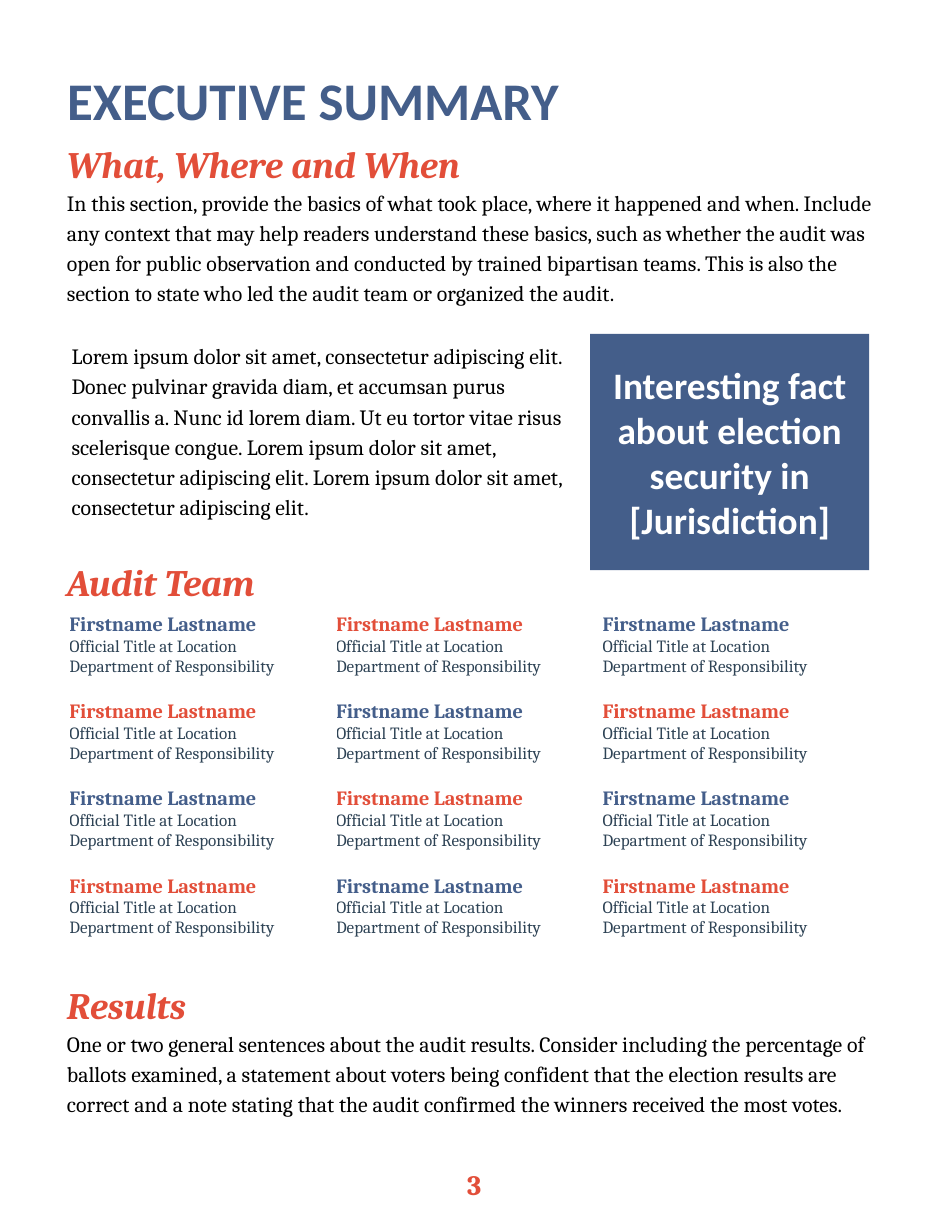
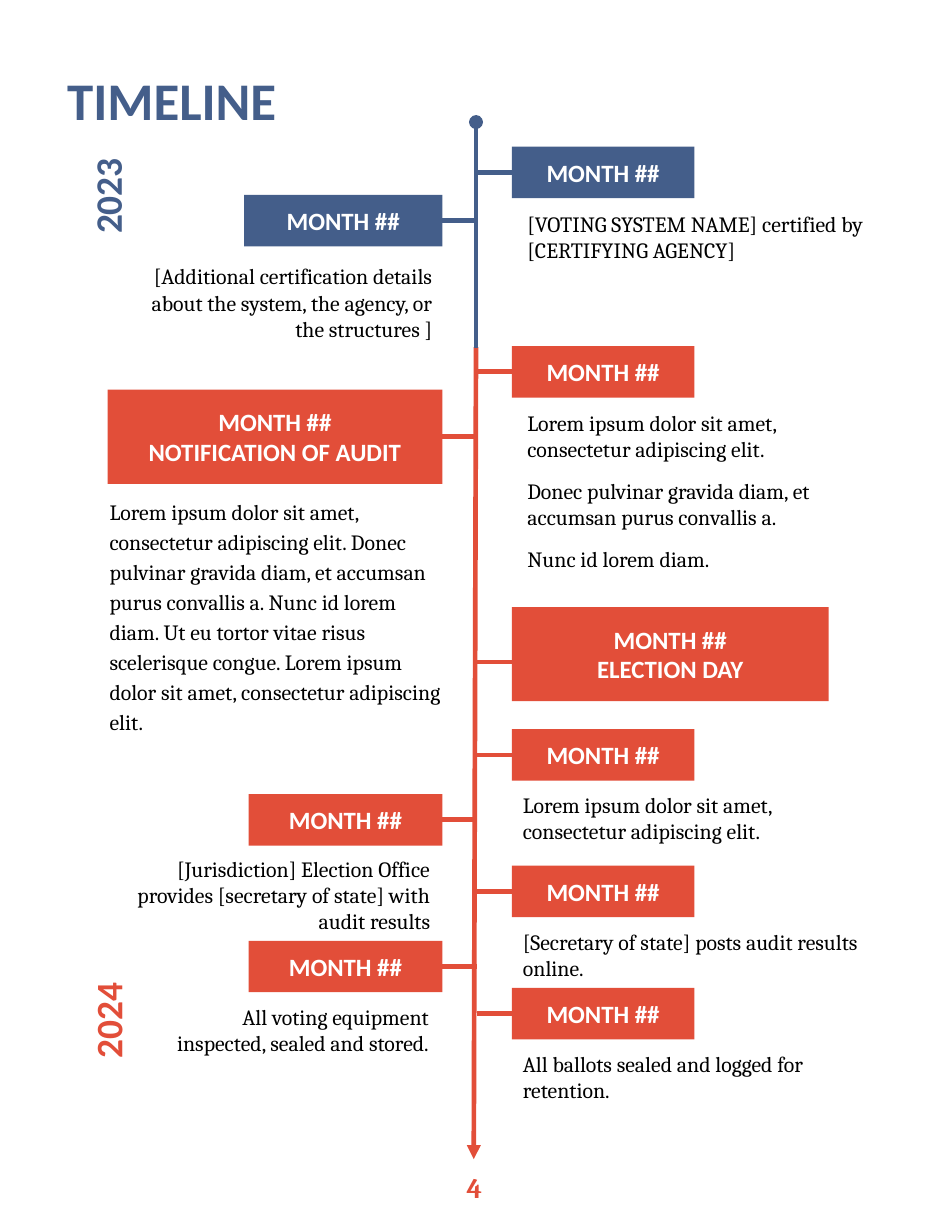
from lxml import etree
from pptx import Presentation
from pptx import util as u
from pptx.dml.color import RGBColor
from pptx.enum import shapes, text
from pptx.oxml import ns

PX = 9144
LEFT, CENTER, RIGHT = text.PP_ALIGN.LEFT, text.PP_ALIGN.CENTER, text.PP_ALIGN.RIGHT
TOP, MIDDLE = text.MSO_ANCHOR.TOP, text.MSO_ANCHOR.MIDDLE


class Theme:
    blue = RGBColor.from_string("445E8A")
    red = RGBColor.from_string("E24E39")
    slate = RGBColor.from_string("2E4355")
    black = RGBColor.from_string("000000")
    white = RGBColor.from_string("FFFFFF")
    title = dict(font="Calibri", size=34, color=blue, bold=True)
    heading = dict(font="Cambria", size=24, color=red, bold=True, italic=True)
    body = dict(font="Cambria", size=14, color=black)
    prose = dict(body, spacing=1.15)
    callout = dict(font="Calibri", size=24, color=white, bold=True, align=CENTER)
    tag = dict(callout, size=16)
    year = dict(callout)
    page = dict(font="Cambria", size=18, color=red, bold=True, align=CENTER)
    name = dict(font="Cambria", size=13, bold=True)
    role = dict(font="Cambria", size=11, color=slate)
    line_width = 3


def put(tf, content, font, size, color, bold=False, italic=False,
        align=LEFT, spacing=None, gap=0, after=0):
    for line in content.split("\n"):
        first = not tf.text
        p = tf.paragraphs[0] if first else tf.add_paragraph()
        p.alignment = align
        p.space_before = u.Pt(0 if first else gap)
        p.space_after = u.Pt(after)
        if spacing:
            p.line_spacing = spacing
        r = p.add_run()
        r.text = line
        r.font.name, r.font.size = font, u.Pt(size)
        r.font.bold, r.font.italic = bold, italic
        r.font.color.rgb = color


class Deck:
    def __init__(self, theme, width, height):
        self.theme = theme
        self.prs = Presentation()
        self.prs.slide_width, self.prs.slide_height = width * PX, height * PX
        self.s = None

    def page(self, title, title_height, number, number_top):
        self.s = self.prs.slides.add_slide(self.prs.slide_layouts[5])
        sp = self.s.shapes.title
        sp.left, sp.top, sp.width, sp.height = (
            v * PX for v in (50, 50, 750, title_height))
        put(self.frame(sp.text_frame), title, **self.theme.title)
        self.text((0, number_top, 847, 35), number, self.theme.page)

    def frame(self, tf, inset=10, inset_y=None, anchor=TOP):
        tf.word_wrap = True
        tf.auto_size = text.MSO_AUTO_SIZE.NONE
        tf.vertical_anchor = anchor
        tf.margin_left = tf.margin_right = inset * PX
        tf.margin_top = tf.margin_bottom = (inset if inset_y is None else inset_y) * PX
        return tf

    def text(self, box, content, style, rotation=0, inset_y=10, anchor=TOP, **extra):
        sp = self.s.shapes.add_textbox(*(v * PX for v in box))
        sp.rotation = rotation
        tf = self.frame(sp.text_frame, inset_y=inset_y, anchor=anchor)
        put(tf, content, **{**style, **extra})
        return tf

    def section(self, box, heading, content):
        tf = self.text(box, heading, self.theme.heading)
        put(tf, content, **self.theme.prose, after=12)

    def block(self, box, content, fill, style, inset=10):
        sp = self.s.shapes.add_shape(
            shapes.MSO_SHAPE.RECTANGLE, *(v * PX for v in box))
        sp.shadow.inherit = False
        sp.fill.solid()
        sp.fill.fore_color.rgb = fill
        sp.line.fill.background()
        put(self.frame(sp.text_frame, inset, anchor=MIDDLE), content, **style)
        return sp

    def line(self, start, end, color, head=None, tail=None):
        c = self.s.shapes.add_connector(
            shapes.MSO_CONNECTOR.STRAIGHT, *(v * PX for v in start + end))
        c.line.color.rgb = color
        c.line.width = u.Pt(self.theme.line_width)
        ln = c.line._get_or_add_ln()
        for tag, kind in (("a:headEnd", head), ("a:tailEnd", tail)):
            if kind:
                etree.SubElement(ln, ns.qn(tag), type=kind)
        etree.SubElement(c._element.spPr, ns.qn("a:effectLst"))
        return c

    def people(self, box, rows, cols, name, role):
        table = self.s.shapes.add_table(rows, cols, *(v * PX for v in box)).table
        table.first_row = table.horz_banding = False
        for i in range(rows):
            for j in range(cols):
                cell = table.cell(i, j)
                cell.fill.background()
                cell.margin_left = cell.margin_top = 0
                cell.margin_right = cell.margin_bottom = 10 * PX
                color = self.theme.red if (i + j) % 2 else self.theme.blue
                put(cell.text_frame, name, **self.theme.name, color=color)
                put(cell.text_frame, role, **self.theme.role)

    def event(self, box, spine, content, fill, branch_y=None):
        sp = self.block(box, content, fill, self.theme.tag)
        x, y, w, h = box
        on_right = x > spine
        edge = x if on_right else x + w
        branch = branch_y or y + h // 2
        c = self.line((edge, branch), (spine, branch), fill)
        if branch_y is None:
            c.begin_connect(sp, 1 if on_right else 3)


LOREM = "Lorem ipsum dolor sit amet, consectetur adipiscing elit."
LOREM_LONG = (
    LOREM + " Donec pulvinar gravida diam, et accumsan purus convallis a. "
    "Nunc id lorem diam. Ut eu tortor vitae risus scelerisque congue. " + LOREM)


def summary(deck):
    t = deck.theme
    deck.page("EXECUTIVE SUMMARY", 66, "3", 1032)
    deck.section(
        (50, 116, 750, 186), "What, Where and When",
        "In this section, provide the basics of what took place, where it happened "
        "and when. Include any context that may help readers understand these basics, "
        "such as whether the audit was open for public observation and conducted by "
        "trained bipartisan teams. This is also the section to state who led the "
        "audit team or organized the audit.")
    deck.text((54, 293, 469, 210), LOREM_LONG + " " + LOREM, t.prose)
    deck.block((527, 298, 249, 211),
               "Interesting fact about election security in [Jurisdiction]",
               t.blue, t.callout, inset=15)
    deck.text((50, 494, 427, 50), "Audit Team", t.heading, inset_y=5)
    deck.people((62, 548, 714, 311), 4, 3, "Firstname Lastname",
                "Official Title at Location Department of Responsibility")
    deck.section(
        (50, 867, 750, 186), "Results",
        "One or two general sentences about the audit results. Consider including "
        "the percentage of ballots examined, a statement about voters being confident "
        "that the election results are correct and a note stating that the audit "
        "confirmed the winners received the most votes.")


def timeline(deck):
    t = deck.theme
    spine, right, month = 426, 457, "MONTH ##"
    deck.page("TIMELINE", 111, "4", 1035)
    deck.line((425, 310), (423, 1035), t.red, tail="triangle")
    deck.line((425, 109), (425, 311), t.blue, head="oval")

    deck.text((44, 150, 103, 50), "2023", t.year, 270, anchor=MIDDLE, color=t.blue)
    deck.text((27, 886, 138, 50), "2024", t.year, 270, anchor=MIDDLE, color=t.red)

    for y, color in ((131, t.blue), (309, t.red), (651, t.red),
                     (773, t.red), (882, t.red)):
        deck.event((right, y, 163, 46), spine, month, color)
    for x, y, w, color in ((218, 174, 177, t.blue), (222, 709, 173, t.red),
                           (222, 840, 173, t.red)):
        deck.event((x, y, w, 46), spine, month, color)
    deck.event((96, 348, 299, 84), spine, month + "\nNOTIFICATION OF AUDIT", t.red)
    deck.event((right, 542, 283, 84), spine, month + "\nELECTION DAY", t.red, 591)

    for box, note in (
        ((461, 178, 331, 84), "[VOTING SYSTEM NAME] certified by [CERTIFYING AGENCY]"),
        ((461, 356, 331, 171),
         LOREM + "\nDonec pulvinar gravida diam, et accumsan purus convallis a."
         "\nNunc id lorem diam."),
        ((right, 697, 316, 84), LOREM),
        ((right, 819, 335, 84), "[Secretary of state] posts audit results online."),
        ((right, 928, 335, 84), "All ballots sealed and logged for retention."),
    ):
        deck.text(box, note, t.body, gap=10)
    for box, note in (
        ((113, 225, 283, 115),
         "[Additional certification details about the system, the agency, "
         "or the structures ]"),
        ((100, 754, 294, 84),
         "[Jurisdiction] Election Office provides [secretary of state] "
         "with audit results"),
        ((127, 886, 266, 84), "All voting equipment inspected, sealed and stored."),
    ):
        deck.text(box, note, t.body, align=RIGHT)
    deck.text((88, 432, 316, 255), LOREM_LONG, t.prose)


def main():
    deck = Deck(Theme, 850, 1100)
    summary(deck)
    timeline(deck)
    deck.prs.save("out.pptx")


if __name__ == "__main__":
    main()
